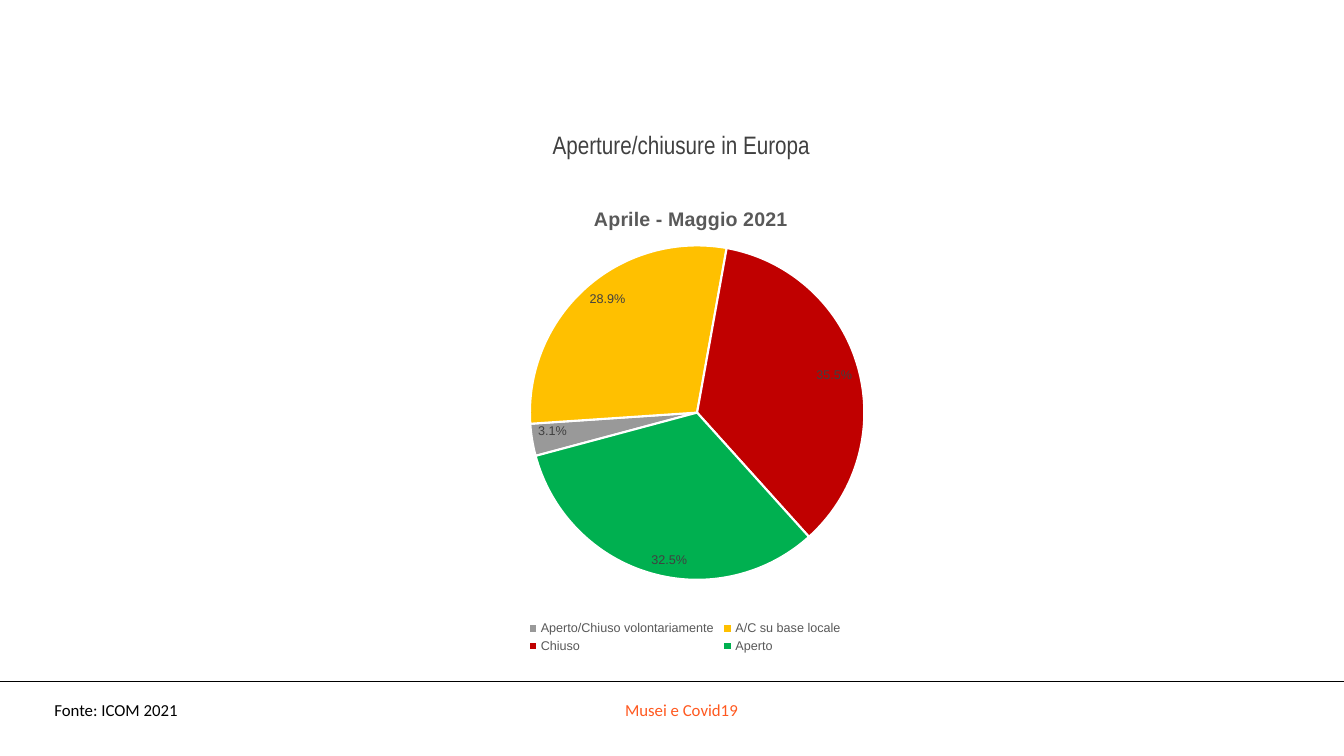
from lxml import etree
from pptx import Presentation
from pptx import util as u
from pptx.chart.data import CategoryChartData
from pptx.dml.color import RGBColor
from pptx.enum import chart as charts, shapes, text
from pptx.oxml.ns import qn

BLACK = RGBColor(0x00, 0x00, 0x00)
WHITE = RGBColor(0xFF, 0xFF, 0xFF)
DARK = RGBColor(0x40, 0x40, 0x40)
MUTED = RGBColor(0x59, 0x59, 0x59)
ORANGE = RGBColor(0xFF, 0x59, 0x20)
SLIDE_WIDTH = u.Cm(33.87)

OPENINGS = [
    ("Aperto/Chiuso volontariamente", 0.031, RGBColor(0x99, 0x99, 0x99)),
    ("A/C su base locale", 0.289, RGBColor(0xFF, 0xC0, 0x00)),
    ("Chiuso", 0.355, RGBColor(0xC0, 0x00, 0x00)),
    ("Aperto", 0.325, RGBColor(0x00, 0xB0, 0x50)),
]


def set_font(font, size, color, name="Arial", bold=False):
    font.size = u.Pt(size)
    font.name = name
    font.bold = bold
    font.color.rgb = color


def write(box, words, size, color, name="Calibri",
          align=text.PP_ALIGN.LEFT, anchor=text.MSO_ANCHOR.MIDDLE):
    frame = box.text_frame
    frame.word_wrap = True
    frame.vertical_anchor = anchor
    para = frame.paragraphs[0]
    para.alignment = align
    span = para.add_run()
    span.text = words
    set_font(span.font, size, color, name)


def add_title(page, words):
    title = page.shapes.title
    title.left, title.top = u.Cm(8.94), u.Cm(3.12)
    title.width, title.height = u.Cm(16.46), u.Cm(1.02)
    write(title, words, 18, DARK, name="Arial Narrow",
          align=text.PP_ALIGN.CENTER)


def add_text(page, left, top, width, height, words, **style):
    box = page.shapes.add_textbox(u.Cm(left), u.Cm(top), u.Cm(width), u.Cm(height))
    write(box, words, **style)


def add_rule(page, top):
    rule = page.shapes.add_connector(
        shapes.MSO_CONNECTOR.STRAIGHT, 0, u.Cm(top), SLIDE_WIDTH, u.Cm(top))
    rule.line.color.rgb = BLACK
    rule.line.width = u.Pt(0.5)
    etree.SubElement(rule._element.spPr, qn("a:effectLst"))


def place(part, index, inner=False, **fractions):
    """Fix a chart part's position, in fractions of the chart area."""
    layout = part.find(qn("c:layout"))
    if layout is None:
        layout = etree.Element(qn("c:layout"))
        part.insert(index, layout)
    manual = etree.SubElement(layout, qn("c:manualLayout"))
    settings = {"layoutTarget": "inner"} if inner else {}
    settings.update(xMode="edge", yMode="edge", **fractions)
    for key, value in settings.items():
        etree.SubElement(manual, qn(f"c:{key}")).set("val", str(value))


def add_pie(page, heading):
    data = CategoryChartData(number_format="0.0%")
    data.categories = [label for label, _, _ in OPENINGS]
    data.add_series("Series 1", [share for _, share, _ in OPENINGS])
    chart = page.shapes.add_chart(
        charts.XL_CHART_TYPE.PIE, u.Cm(9.5), u.Cm(4.62),
        u.Cm(15.37), u.Cm(12.04), data).chart
    set_font(chart.font, 10, BLACK)

    chart.has_title = True
    frame = chart.chart_title.text_frame
    frame.text = heading
    set_font(frame.paragraphs[0].runs[0].font, 14, MUTED, bold=True)

    chart.has_legend = True
    chart.legend.position = charts.XL_LEGEND_POSITION.BOTTOM
    chart.legend.include_in_layout = False
    set_font(chart.legend.font, 9, MUTED)

    plot = chart.plots[0]
    plot.vary_by_categories = True
    plot.has_data_labels = True
    labels = plot.data_labels
    labels.show_value = True
    labels.show_percentage = False
    labels.number_format = "0.0%"
    labels.number_format_is_linked = False
    labels.position = charts.XL_LABEL_POSITION.INSIDE_END
    set_font(labels.font, 9, DARK)
    for index, (_, _, color) in enumerate(OPENINGS):
        wedge = plot.series[0].points[index].format
        wedge.fill.solid()
        wedge.fill.fore_color.rgb = color
        wedge.line.color.rgb = WHITE
        wedge.line.width = u.Pt(1.5)

    pie = chart._chartSpace.find(".//" + qn("c:pieChart"))
    angle = pie.find(qn("c:firstSliceAng"))
    if angle is None:
        angle = etree.SubElement(pie, qn("c:firstSliceAng"))
    angle.set("val", "255")
    place(pie.getparent(), 0, inner=True, x=0.25, y=0.13, w=0.55, h=0.7)
    place(chart.chart_title._element, 1, x=0.35, y=0.04)
    place(chart.legend._element, 1, x=0.24, y=0.91, w=0.53, h=0.08)


def main():
    deck = Presentation()
    deck.slide_width, deck.slide_height = SLIDE_WIDTH, u.Cm(19.05)
    page = deck.slides.add_slide(deck.slide_layouts[5])
    add_rule(page, 17.17)
    add_title(page, "Aperture/chiusure in Europa")
    add_text(page, 1.12, 17.5, 32.11, 1.02, "Musei e Covid19", size=12,
             color=ORANGE, align=text.PP_ALIGN.CENTER, anchor=text.MSO_ANCHOR.TOP)
    add_text(page, 1.12, 17.5, 6.22, 0.76, "Fonte: ICOM 2021", size=12, color=BLACK)
    add_pie(page, "Aprile - Maggio 2021")
    deck.save("out.pptx")


if __name__ == "__main__":
    main()
